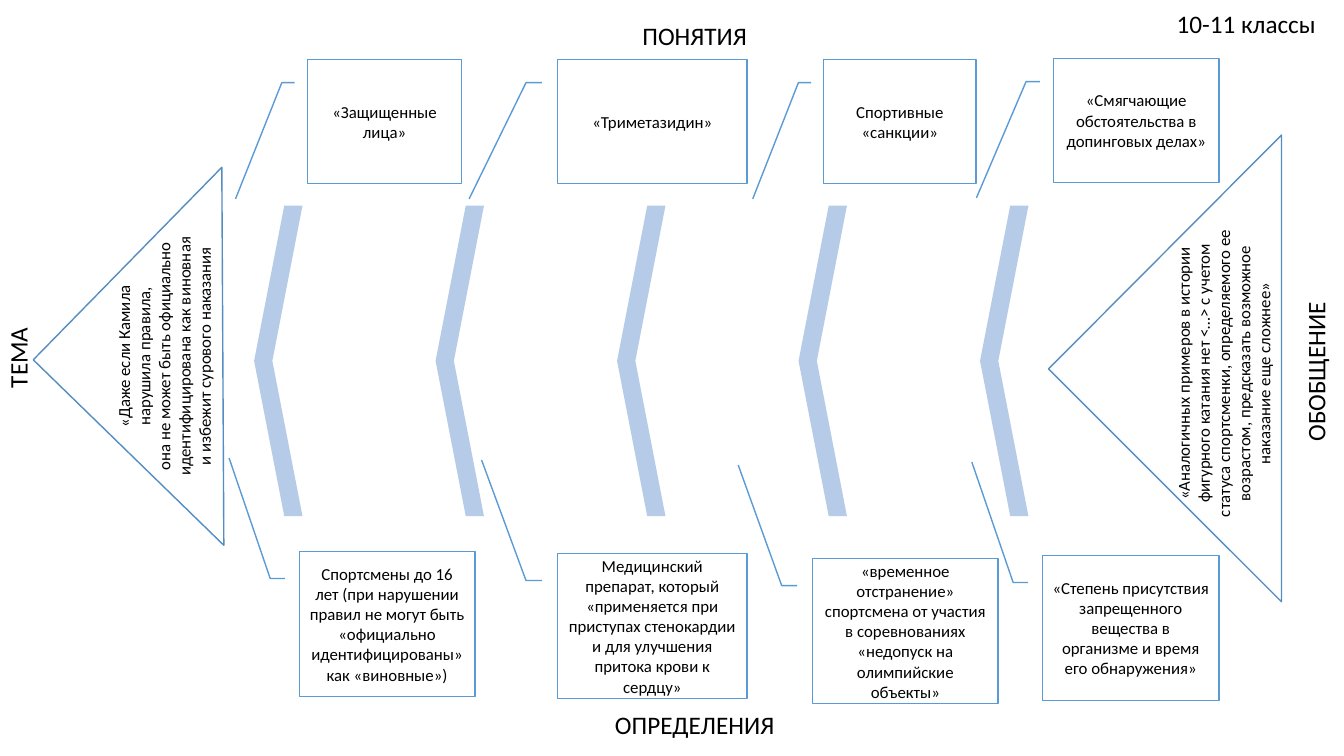
"""Build the fishbone slide linking concepts and definitions to a topic and its conclusion."""
from dataclasses import dataclass

from pptx import Presentation
from pptx.dml.color import RGBColor
from pptx.enum.shapes import MSO_SHAPE
from pptx.enum.text import MSO_ANCHOR, MSO_AUTO_SIZE, PP_ALIGN
from pptx.util import Inches, Pt

COLORS = {
    "text": "000000",
    "paper": "FFFFFF",
    "rib": "B5CBE7",
    "callout": "5B9BD5",
    "triangle": "538DC1",
}
FONT = "Calibri"
CONCEPT_HEIGHT = 1.23
DEFINITION_HEIGHT = 1.44
DEFINITION_POINTER = (0.1875, -0.0833, 0.1875, -0.1667, -0.643, -0.401)
RIB_COUNT, RIB_LEFT, RIB_PITCH = 5, 2.52, 1.8


@dataclass(frozen=True)
class Callout:
    """A framed text with a bent pointer towards the spine."""
    text: str
    left: float
    top: float
    width: float
    height: float
    pointer: tuple = ()


@dataclass(frozen=True)
class Label:
    """A free text, given line by line."""
    lines: tuple
    left: float
    top: float
    width: float
    height: float
    size: int = 18
    rotation: int = 0


TRIANGLES = (
    ((0.33, 3.57), (2.2, 1.66), (2.22, 5.41)),
    ((10.4, 3.66), (12.71, 1.34), (12.71, 5.97)),
)

CALLOUTS = (
    Callout("«Защищенные лица»", 3.05, 0.59, 1.53, CONCEPT_HEIGHT),
    Callout("«Триметазидин»", 5.53, 0.59, 1.88, CONCEPT_HEIGHT),
    Callout("Спортивные «санкции»", 8.17, 0.59, 1.51, CONCEPT_HEIGHT),
    Callout("«Смягчающие обстоятельства в допинговых делах»",
            10.45, 0.58, 1.64, CONCEPT_HEIGHT),
    Callout("Спортсмены до 16 лет (при нарушении правил не могут быть "
            "«официально идентифицированы» как «виновные»)",
            2.97, 5.47, 1.74, DEFINITION_HEIGHT, DEFINITION_POINTER),
    Callout("Медицинский препарат, который «применяется при приступах "
            "стенокардии и для улучшения притока крови к сердцу»",
            5.53, 5.49, 1.88, DEFINITION_HEIGHT, DEFINITION_POINTER),
    Callout("«временное отстранение» спортсмена от участия в соревнованиях "
            "«недопуск на олимпийские объекты»",
            8.06, 5.54, 1.84, DEFINITION_HEIGHT, DEFINITION_POINTER),
    Callout("«Степень присутствия запрещенного вещества в организме "
            "и время его обнаружения»",
            10.34, 5.51, 1.75, DEFINITION_HEIGHT, DEFINITION_POINTER),
)

LABELS = (
    Label(("ТЕМА",), -1.3, 3.35, 2.95, 0.4, rotation=270),
    Label(("ОБОБЩЕНИЕ",), 11.57, 3.49, 2.95, 0.4, rotation=270),
    Label(("ПОНЯТИЯ",), 3.39, 0.15, 7, 0.4),
    Label(("ОПРЕДЕЛЕНИЯ",), 1.78, 6.99, 10.22, 0.4),
    Label(("«Даже если Камила", "нарушила правила,",
           "она не может быть официально идентифицирована как виновная",
           "и избежит сурового наказания"),
          0.1, 2.98, 3.06, 1.11, size=12, rotation=270),
    Label(("«Аналогичных примеров в истории фигурного катания нет <…> с учетом "
           "статуса спортсменки, определяемого ее возрастом, предсказать "
           "возможное наказание еще сложнее»",),
          10.61, 3.15, 3.06, 1.11, size=12, rotation=270),
)

GRADE = Label(("10-11 классы",), 11.5, 0.03, 1.65, 0.4)


def color(name: str) -> RGBColor:
    """Return a palette colour."""
    return RGBColor.from_string(COLORS[name])


def write(frame, lines: tuple, size: int, align: PP_ALIGN, anchor: MSO_ANCHOR) -> None:
    """Write lines into one paragraph, one run each."""
    frame.word_wrap = True
    frame.auto_size = MSO_AUTO_SIZE.NONE
    frame.vertical_anchor = anchor
    paragraph = frame.paragraphs[0]
    paragraph.alignment = align
    for index, line in enumerate(lines):
        if index:
            paragraph.add_line_break()
        run = paragraph.add_run()
        run.text = line
        run.font.name = FONT
        run.font.size = Pt(size)
        run.font.color.rgb = color("text")


def paint(shape, fill: str, outline: str = "") -> None:
    """Give a shape a flat fill and an optional thin outline."""
    shape.shadow.inherit = False
    shape.fill.solid()
    shape.fill.fore_color.rgb = color(fill)
    if outline:
        shape.line.color.rgb = color(outline)
        shape.line.width = Pt(1)
    else:
        shape.line.fill.background()


def draw_rib(slide, left: float) -> None:
    """Draw one left-pointing chevron of the spine."""
    rib = slide.shapes.add_shape(MSO_SHAPE.CHEVRON, Inches(left), Inches(2.04),
                                 Inches(0.48), Inches(3.08))
    rib.rotation = 180
    rib.adjustments[0] = 0.623
    paint(rib, "rib")


def draw_triangle(slide, corners: tuple) -> None:
    """Draw the head or the tail of the fish."""
    start, *others = [(Inches(x), Inches(y)) for x, y in corners]
    builder = slide.shapes.build_freeform(*start)
    builder.add_line_segments(others, close=True)
    paint(builder.convert_to_shape(), "paper", "triangle")


def draw_callout(slide, callout: Callout) -> None:
    """Draw a concept or a definition."""
    frame = slide.shapes.add_shape(
        MSO_SHAPE.LINE_CALLOUT_2, Inches(callout.left), Inches(callout.top),
        Inches(callout.width), Inches(callout.height))
    for index, value in enumerate(callout.pointer):
        frame.adjustments[index] = value
    paint(frame, "paper", "callout")
    write(frame.text_frame, (callout.text,), 12, PP_ALIGN.CENTER, MSO_ANCHOR.MIDDLE)


def draw_label(slide, label: Label) -> None:
    """Draw a centred, possibly turned text."""
    box = slide.shapes.add_textbox(Inches(label.left), Inches(label.top),
                                   Inches(label.width), Inches(label.height))
    box.rotation = label.rotation
    write(box.text_frame, label.lines, label.size, PP_ALIGN.CENTER, MSO_ANCHOR.TOP)


def place_title(slide, label: Label) -> None:
    """Move the title placeholder to the corner and fill it."""
    title = slide.shapes.title
    title.left, title.top = Inches(label.left), Inches(label.top)
    title.width, title.height = Inches(label.width), Inches(label.height)
    write(title.text_frame, label.lines, label.size, PP_ALIGN.RIGHT, MSO_ANCHOR.TOP)


def main() -> None:
    """Build and save the slide."""
    deck = Presentation()
    deck.slide_width, deck.slide_height = Inches(13.33), Inches(7.5)
    slide = deck.slides.add_slide(deck.slide_layouts.get_by_name("Title Only"))
    place_title(slide, GRADE)
    for index in range(RIB_COUNT):
        draw_rib(slide, RIB_LEFT + index * RIB_PITCH)
    for corners in TRIANGLES:
        draw_triangle(slide, corners)
    for callout in CALLOUTS:
        draw_callout(slide, callout)
    for label in LABELS:
        draw_label(slide, label)
    deck.save("out.pptx")


if __name__ == "__main__":
    main()
